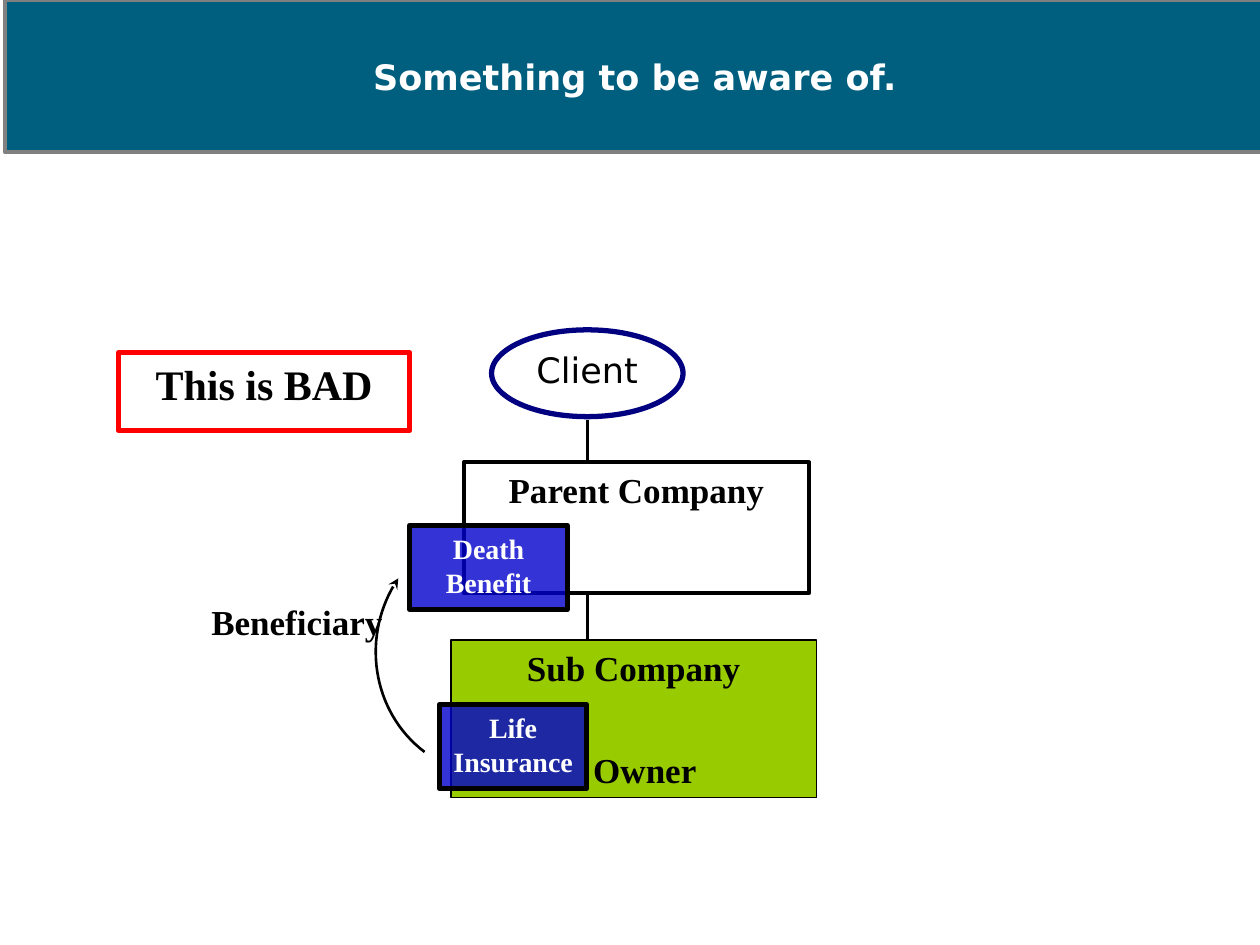
from lxml import etree
from pptx import Presentation
from pptx.dml.color import RGBColor
from pptx.enum.shapes import MSO_CONNECTOR, MSO_SHAPE
from pptx.enum.text import MSO_ANCHOR, MSO_AUTO_SIZE, PP_ALIGN
from pptx.oxml.ns import qn
from pptx.util import Cm, Pt

RECT, OVAL = MSO_SHAPE.RECTANGLE, MSO_SHAPE.OVAL
LINE = MSO_CONNECTOR.STRAIGHT
TOP, MIDDLE = MSO_ANCHOR.TOP, MSO_ANCHOR.MIDDLE
LEFT, CENTER = PP_ALIGN.LEFT, PP_ALIGN.CENTER
SANS, SERIF = "DejaVu Sans", "Times New Roman"
HEX = {"black": "000000", "white": "FFFFFF", "teal": "005F7F", "gray": "808080",
       "green": "99CC00", "navy": "000080", "blue": "0000CC", "red": "FF0000"}

# Lengths in cm: left, top, width, height
TITLE = ("Something to be aware of.", (0.1, 0, 25.4, 3.07))
# lines, form, place, fill, border, border width, size, font, text colour
BOXES = [
    (["Sub Company"], RECT, (9.09, 12.9, 7.37, 3.18), "green", "black", 0.75, 20, SERIF, "black"),
    (["Client"], OVAL, (9.91, 6.65, 3.86, 1.75), "white", "navy", 3, 20, SANS, "black"),
    (["Parent Company"], RECT, (9.35, 9.32, 6.96, 2.64), "white", "black", 2.25, 20, SERIF, "black"),
    (["Life", "Insurance"], RECT, (8.86, 14.2, 2.97, 1.7), "blue", "black", 3, 16, SERIF, "white"),
    (["Death", "Benefit"], RECT, (8.26, 10.59, 3.18, 1.7), "blue", "black", 3, 16, SERIF, "white"),
    (["This is BAD"], RECT, (2.39, 7.11, 5.87, 1.57), "white", "red", 3, 24, SERIF, "black"),
]
LABELS = [("Beneficiary", (4.01, 11.99, 4.01, 1.55)),
          ("Owner", (11.71, 14.96, 2.72, 1.35))]
AXIS = 11.84
LINKS = [(8.46, 9.35), (11.63, 13.44)]
CURVE = [(8.56, 15.16), (7.49, 14.35), (7.26, 12.8), (8.03, 11.66)]
STEPS = 32


def color(name):
    return RGBColor.from_string(HEX[name])


def paint(shape, fill, border, width):
    shape.fill.solid()
    shape.fill.fore_color.rgb = color(fill)
    shape.line.color.rgb = color(border)
    shape.line.width = Pt(width)


def write(shape, lines, size, face, ink, align=CENTER, anchor=TOP, bold=True):
    frame = shape.text_frame
    frame.word_wrap = True
    frame.auto_size = MSO_AUTO_SIZE.NONE
    frame.vertical_anchor = anchor
    frame.text = "\n".join(lines)
    for para in frame.paragraphs:
        para.alignment = align
        font = para.font
        font.size, font.name, font.bold = Pt(size), face, bold
        font.color.rgb = color(ink)


def bezier(points, t):
    """Return the point at t (0 to 1) on a cubic curve."""
    parts = ((1 - t) ** 3, 3 * t * (1 - t) ** 2, 3 * t ** 2 * (1 - t), t ** 3)
    return tuple(Cm(sum(w * p[i] for w, p in zip(parts, points))) for i in (0, 1))


def add_title(slide):
    text, place = TITLE
    title = slide.shapes.title
    title.left, title.top, title.width, title.height = map(Cm, place)
    paint(title, "teal", "gray", 2)
    write(title, [text], 20, SANS, "white", anchor=MIDDLE)


def add_links(slide):
    for start, end in LINKS:
        link = slide.shapes.add_connector(LINE, Cm(AXIS), Cm(start), Cm(AXIS), Cm(end))
        link.line.color.rgb = color("black")
        link.line.width = Pt(1.5)
        etree.SubElement(link._element.spPr, qn("a:effectLst"))


def add_boxes(slide):
    for lines, form, place, fill, border, width, size, face, ink in BOXES:
        box = slide.shapes.add_shape(form, *map(Cm, place))
        box.shadow.inherit = False
        paint(box, fill, border, width)
        write(box, lines, size, face, ink, bold=face == SERIF)
        if fill == "blue":
            tint = box._element.spPr.find(qn("a:solidFill"))[0]
            etree.SubElement(tint, qn("a:alpha"), val="80000")


def add_labels(slide):
    for text, place in LABELS:
        label = slide.shapes.add_textbox(*map(Cm, place))
        write(label, [text], 20, SERIF, "black", align=LEFT)


def add_arrow(slide):
    points = [bezier(CURVE, n / STEPS) for n in range(STEPS + 1)]
    path = slide.shapes.build_freeform(*points[0])
    path.add_line_segments(points[1:], close=False)
    arrow = path.convert_to_shape()
    arrow.shadow.inherit = False
    arrow.fill.background()
    arrow.line.color.rgb = color("black")
    arrow.line.width = Pt(1.5)
    etree.SubElement(arrow.line._get_or_add_ln(), qn("a:tailEnd"), type="stealth")


def main():
    deck = Presentation()
    deck.slide_width, deck.slide_height = Cm(25.4), Cm(19.05)
    slide = deck.slides.add_slide(deck.slide_layouts[5])
    for step in (add_title, add_links, add_boxes, add_labels, add_arrow):
        step(slide)
    deck.save("out.pptx")


if __name__ == "__main__":
    main()
